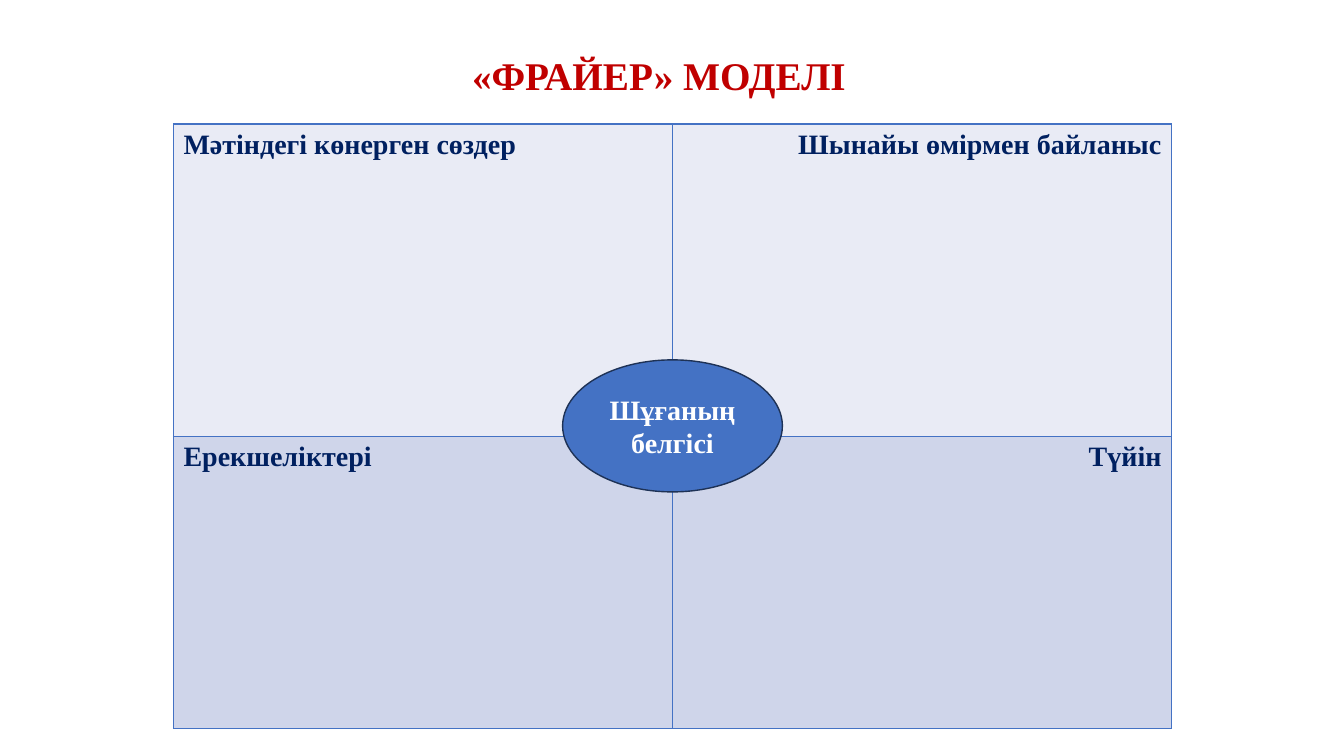
from lxml import etree
from pptx import Presentation
from pptx.dml.color import RGBColor
from pptx.enum import shapes, text
from pptx.oxml import ns
from pptx.util import Inches, Pt

LEFT, CENTER, RIGHT = text.PP_ALIGN.LEFT, text.PP_ALIGN.CENTER, text.PP_ALIGN.RIGHT
MIDDLE = text.MSO_ANCHOR.MIDDLE


def rgb(value):
    return RGBColor.from_string(value)


class FrayerSlide:
    font = "Times New Roman"
    blue, navy, red, white = "4472C4", "002060", "C00000", "FFFFFF"
    outline = "1E3256"
    row_fills = ("E9EBF5", "CFD5EA")

    def __init__(self, prs):
        self.s = prs.slides.add_slide(prs.slide_layouts[5])

    def set_text(self, tf, words, size, color, align):
        tf.text = words
        p = tf.paragraphs[0]
        p.alignment = align
        for r in p.runs:
            r.font.name, r.font.size, r.font.bold = self.font, Pt(size), True
            r.font.color.rgb = rgb(color)

    def title(self, words, *box):
        sp = self.s.shapes.title
        sp.left, sp.top, sp.width, sp.height = map(Inches, box)
        tf = sp.text_frame
        self.set_text(tf, words, 28, self.red, CENTER)
        tf.word_wrap = False
        tf.auto_size = text.MSO_AUTO_SIZE.NONE
        tf.vertical_anchor = MIDDLE

    def border(self, cell):
        tc_pr = cell._tc.get_or_add_tcPr()
        for side in ("lnL", "lnR", "lnT", "lnB"):
            ln = etree.SubElement(tc_pr, ns.qn(f"a:{side}"), w=str(Pt(1)))
            fill = etree.SubElement(ln, ns.qn("a:solidFill"))
            etree.SubElement(fill, ns.qn("a:srgbClr"), val=self.blue)

    def table(self, rows, heights, *box):
        table = self.s.shapes.add_table(len(rows), len(rows[0]), *map(Inches, box)).table
        for i, (words, height) in enumerate(zip(rows, heights)):
            table.rows[i].height = Inches(height)
            for j, align in enumerate((LEFT, RIGHT)):
                cell = table.cell(i, j)
                self.border(cell)
                cell.fill.solid()
                cell.fill.fore_color.rgb = rgb(self.row_fills[i])
                self.set_text(cell.text_frame, words[j], 20, self.navy, align)

    def ellipse(self, words, *box):
        sp = self.s.shapes.add_shape(shapes.MSO_SHAPE.OVAL, *map(Inches, box))
        sp.shadow.inherit = False
        sp.fill.solid()
        sp.fill.fore_color.rgb = rgb(self.blue)
        sp.line.color.rgb = rgb(self.outline)
        sp.line.width = Pt(1)
        sp.text_frame.word_wrap = True
        sp.text_frame.vertical_anchor = MIDDLE
        self.set_text(sp.text_frame, words, 20, self.white, CENTER)


def main():
    prs = Presentation()
    prs.slide_width, prs.slide_height = Inches(13.33), Inches(7.5)
    slide = FrayerSlide(prs)
    slide.title("«ФРАЙЕР» МОДЕЛІ", 4.56, 0.46, 3.95, 0.57)
    quadrants = [
        ("Мәтіндегі көнерген сөздер", "Шынайы өмірмен байланыс"),
        ("Ерекшеліктері", "Түйін"),
    ]
    slide.table(quadrants, (3.1, 2.9), 1.72, 1.23, 9.9, 6)
    slide.ellipse("Шұғаның белгісі", 5.58, 3.57, 2.18, 1.31)
    prs.save("out.pptx")


if __name__ == "__main__":
    main()
